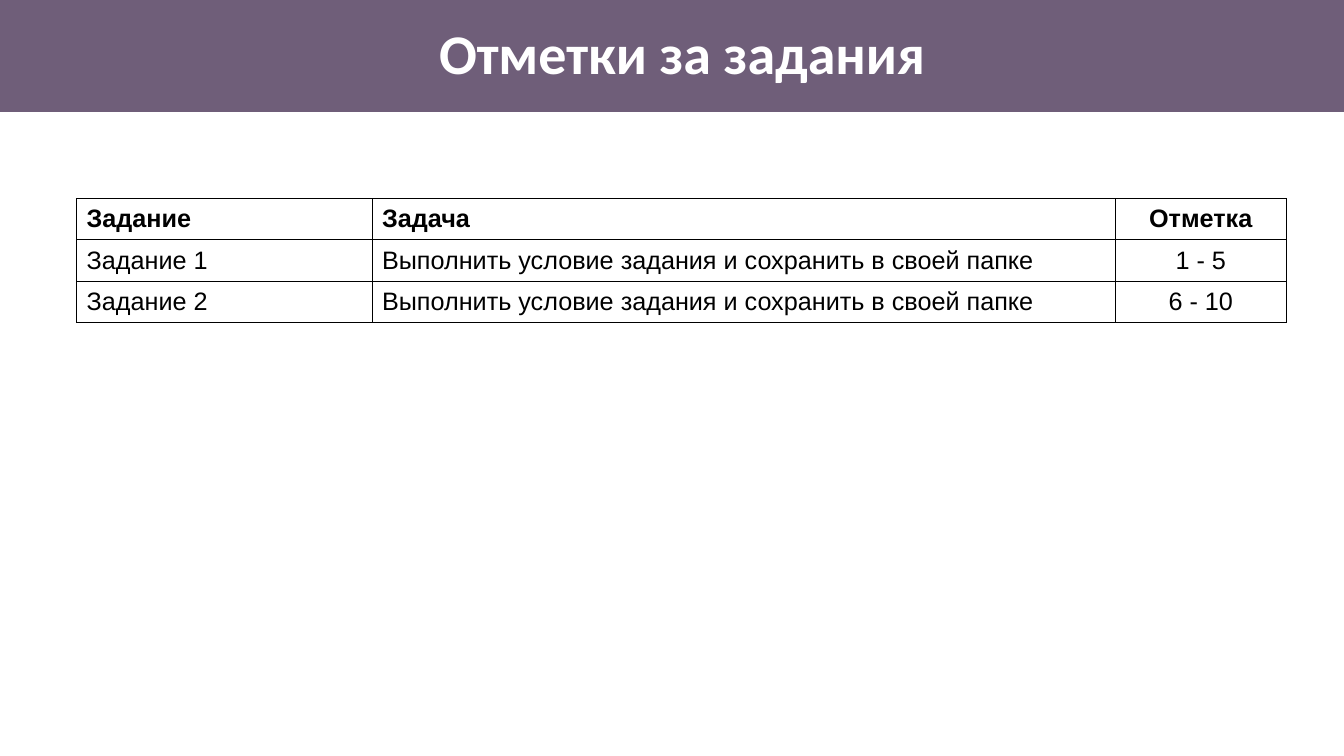
"""Build a slide with a title banner and a table of task marks."""
import pptx
import pptx.dml.color
import pptx.enum.shapes
import pptx.enum.text
import pptx.oxml
import pptx.oxml.ns
import pptx.util

Inches = pptx.util.Inches
Align = pptx.enum.text.PP_ALIGN
Anchor = pptx.enum.text.MSO_ANCHOR


def paint(color_format, color):
    """Apply a hex colour to a font colour or a fill colour."""
    color_format.rgb = pptx.dml.color.RGBColor.from_string(color)


class MarksPage:
    """Hold the style and the current slide."""

    banner_color = "6F5E79"
    title_color = "FFFFFF"
    ink = "000000"
    title_font = "Calibri"
    table_font = "Arial"
    border_width = pptx.util.Pt(0.75)

    def __init__(self, deck):
        """Add a title-only slide to the deck."""
        self.deck = deck
        self.page = deck.slides.add_slide(deck.slide_layouts[5])

    def format_paragraph(self, para, font, size, color, bold, align):
        """Set the alignment and the run style of a paragraph."""
        para.alignment = align
        for span in para.runs:
            span.font.name = font
            span.font.size = pptx.util.Pt(size)
            span.font.bold = bold
            paint(span.font.color, color)

    def add_title(self, text, left, width, height):
        """Place the title over a full-width banner."""
        title = self.page.shapes.title
        title.left, title.top = Inches(left), Inches(0)
        title.width, title.height = Inches(width), Inches(height)
        frame = title.text_frame
        frame.text = text
        frame.word_wrap = True
        frame.auto_size = pptx.enum.text.MSO_AUTO_SIZE.NONE
        frame.vertical_anchor = Anchor.MIDDLE
        para = frame.paragraphs[0]
        para.line_spacing = 0.9
        self.format_paragraph(para, self.title_font, 40, self.title_color, True, Align.CENTER)

        banner = self.page.shapes.add_shape(
            pptx.enum.shapes.MSO_SHAPE.RECTANGLE, 0, 0, self.deck.slide_width, Inches(height))
        banner.shadow.inherit = False
        banner.fill.solid()
        paint(banner.fill.fore_color, self.banner_color)
        banner.line.fill.background()
        title.element.addprevious(banner.element)

    def add_borders(self, cell):
        """Draw a thin line on all four sides of a cell."""
        properties = cell._tc.get_or_add_tcPr()
        for side in ("lnL", "lnR", "lnT", "lnB"):
            properties.append(pptx.oxml.parse_xml(
                f'<a:{side} {pptx.oxml.ns.nsdecls("a")} w="{self.border_width}">'
                f'<a:solidFill><a:srgbClr val="{self.ink}"/></a:solidFill></a:{side}>'))

    def add_table(self, rows, left, top, column_widths, row_height, aligns):
        """Add a plain bordered table with a bold first row."""
        table = self.page.shapes.add_table(
            len(rows), len(column_widths), Inches(left), Inches(top),
            Inches(sum(column_widths)), Inches(row_height * len(rows))).table
        table.horz_banding = False
        for column, width in zip(table.columns, column_widths):
            column.width = Inches(width)
        for row_index, texts in enumerate(rows):
            table.rows[row_index].height = Inches(row_height)
            for column_index, text in enumerate(texts):
                cell = table.cell(row_index, column_index)
                cell.text_frame.text = text
                cell.vertical_anchor = Anchor.MIDDLE
                self.add_borders(cell)
                cell.fill.background()
                self.format_paragraph(
                    cell.text_frame.paragraphs[0], self.table_font, 18, self.ink,
                    row_index == 0, aligns[column_index])


def main():
    """Build and save the deck."""
    deck = pptx.Presentation()
    deck.slide_width, deck.slide_height = Inches(13.33), Inches(7.5)
    marks = MarksPage(deck)
    marks.add_title("Отметки за задания", 0.76, 12.01, 1.11)
    condition = "Выполнить условие задания и сохранить в своей папке"
    rows = [
        ("Задание", "Задача", "Отметка"),
        ("Задание 1", condition, "1 - 5"),
        ("Задание 2", condition, "6 - 10"),
    ]
    marks.add_table(rows, 0.76, 1.97, (2.93, 7.37, 1.7), 0.41,
                    (Align.LEFT, Align.LEFT, Align.CENTER))
    deck.save("out.pptx")


if __name__ == "__main__":
    main()
